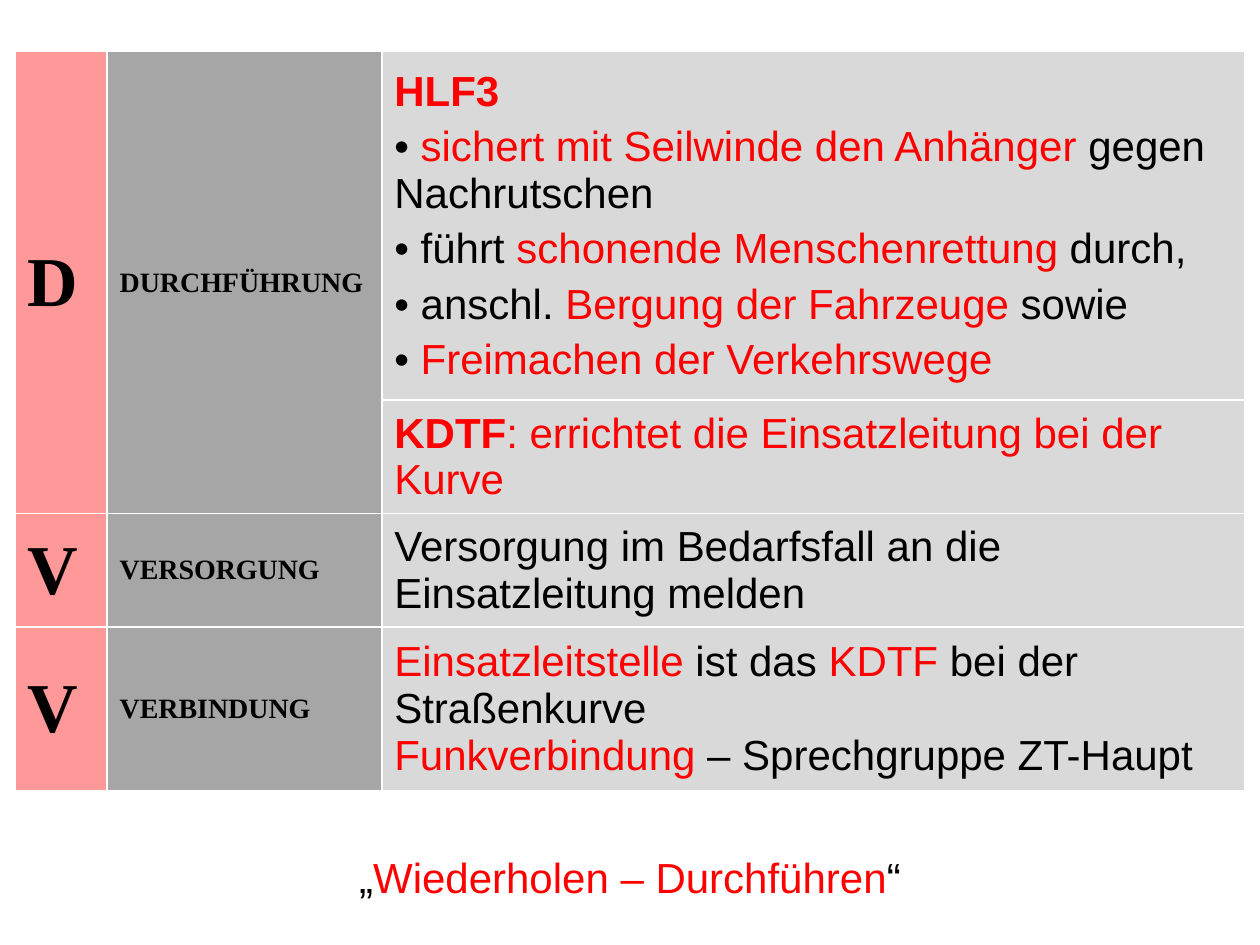
from dataclasses import dataclass

from lxml.etree import SubElement
from pptx import Presentation
from pptx.dml.color import RGBColor
from pptx.enum.text import MSO_ANCHOR, PP_ALIGN
from pptx.oxml.ns import qn
from pptx.util import Inches, Pt

BLACK = RGBColor(0x00, 0x00, 0x00)
RED = RGBColor(0xFF, 0x00, 0x00)
PINK = RGBColor(0xFF, 0x99, 0x99)
DARK_GREY = RGBColor(0xA6, 0xA6, 0xA6)
LIGHT_GREY = RGBColor(0xD9, 0xD9, 0xD9)
COLUMN_FILLS = (PINK, DARK_GREY, LIGHT_GREY)

LETTER = {"name": "Times New Roman", "size": Pt(40), "bold": True}
KEYWORD = {"name": "Times New Roman", "size": Pt(16), "bold": True}
BODY = {"name": "Arial", "size": Pt(24), "bold": False}
STRONG = {**BODY, "bold": True}

COLUMN_WIDTHS = (0.73, 2.18, 6.85)
ROW_HEIGHTS = (2.75, 0.9, 0.9, 1.3)


@dataclass(frozen=True)
class Span:
    text: str
    color: RGBColor = BLACK
    style: dict = None


@dataclass(frozen=True)
class Line:
    spans: tuple
    bullet: bool = False
    spaced: bool = False


@dataclass(frozen=True)
class Entry:
    row: int
    column: int
    lines: tuple
    style: dict
    row_span: int = 1


def label(row: int, column: int, text: str, style: dict, row_span: int = 1) -> Entry:
    return Entry(row, column, (Line((Span(text),)),), style, row_span)


def bullet(*spans: Span) -> Line:
    return Line(spans, bullet=True, spaced=True)


ENTRIES = (
    label(0, 0, "D", LETTER, 2),
    label(0, 1, "DURCHFÜHRUNG", KEYWORD, 2),
    Entry(0, 2, (
        Line((Span("HLF3", RED, STRONG),), spaced=True),
        bullet(Span(" "), Span("sichert mit Seilwinde den Anhänger", RED), Span(" gegen Nachrutschen")),
        bullet(Span(" führt "), Span("schonende Menschenrettung", RED), Span(" durch,")),
        bullet(Span(" anschl. "), Span("Bergung der Fahrzeuge", RED), Span(" sowie")),
        bullet(Span(" "), Span("Freimachen der Verkehrswege", RED)),
    ), BODY),
    Entry(1, 2, (
        Line((Span("KDTF", RED, STRONG), Span(": errichtet die Einsatzleitung bei der Kurve", RED))),
    ), BODY),
    label(2, 0, "V", LETTER),
    label(2, 1, "VERSORGUNG", KEYWORD),
    label(2, 2, "Versorgung im Bedarfsfall an die Einsatzleitung melden", BODY),
    label(3, 0, "V", LETTER),
    label(3, 1, "VERBINDUNG", KEYWORD),
    Entry(3, 2, (
        Line((Span("Einsatzleitstelle", RED), Span(" ist das "), Span("KDTF ", RED),
              Span("bei der Straßenkurve")), spaced=True),
        Line((Span("Funkverbindung ", RED), Span("– Sprechgruppe ZT-Haupt"))),
    ), BODY),
)
CLOSING = Line((Span("„"), Span("Wiederholen – Durchführen", RED), Span("“")))


def write_line(paragraph, line: Line, style: dict) -> None:
    paragraph.space_before = Pt(4.8 if line.spaced else 0)
    if line.bullet:
        properties = paragraph._p.get_or_add_pPr()
        SubElement(properties, qn("a:buFont"), typeface="Arial")
        SubElement(properties, qn("a:buChar"), char="•")
    for span in line.spans:
        run = paragraph.add_run()
        run.text = span.text
        for attribute, value in (span.style or style).items():
            setattr(run.font, attribute, value)
        run.font.color.rgb = span.color


def format_cell(cell, fill: RGBColor) -> None:
    """Give the cell white 1 pt borders, its fill and centred anchoring."""
    properties = cell._tc.get_or_add_tcPr()
    for side in ("lnL", "lnR", "lnT", "lnB"):
        border = SubElement(properties, qn(f"a:{side}"), w=str(Pt(1)))
        SubElement(SubElement(border, qn("a:solidFill")), qn("a:srgbClr"), val="FFFFFF")
    cell.fill.solid()
    cell.fill.fore_color.rgb = fill
    cell.vertical_anchor = MSO_ANCHOR.MIDDLE


def fill_entry(table, entry: Entry) -> None:
    cell = table.cell(entry.row, entry.column)
    if entry.row_span > 1:
        cell.merge(table.cell(entry.row + entry.row_span - 1, entry.column))
    frame = cell.text_frame
    for index, line in enumerate(entry.lines):
        paragraph = frame.add_paragraph() if index else frame.paragraphs[0]
        write_line(paragraph, line, entry.style)


def add_order_table(slide) -> None:
    table = slide.shapes.add_table(
        len(ROW_HEIGHTS), len(COLUMN_WIDTHS), Inches(0.12), Inches(0.41),
        Inches(sum(COLUMN_WIDTHS)), Inches(sum(ROW_HEIGHTS))).table
    table.first_row = table.horz_banding = False
    for column, width in zip(table.columns, COLUMN_WIDTHS):
        column.width = Inches(width)
    for row, height in zip(table.rows, ROW_HEIGHTS):
        row.height = Inches(height)
        for cell, fill in zip(row.cells, COLUMN_FILLS):
            format_cell(cell, fill)
    for entry in ENTRIES:
        fill_entry(table, entry)


def add_closing(slide) -> None:
    frame = slide.shapes.add_textbox(Inches(0.12), Inches(6.71), Inches(9.76), Inches(0.51)).text_frame
    frame.word_wrap = True
    paragraph = frame.paragraphs[0]
    paragraph.alignment = PP_ALIGN.CENTER
    write_line(paragraph, CLOSING, BODY)


def main() -> None:
    presentation = Presentation()
    presentation.slide_width, presentation.slide_height = Inches(10), Inches(7.5)
    slide = presentation.slides.add_slide(presentation.slide_layouts[6])
    add_closing(slide)
    add_order_table(slide)
    presentation.save("out.pptx")


if __name__ == "__main__":
    main()
